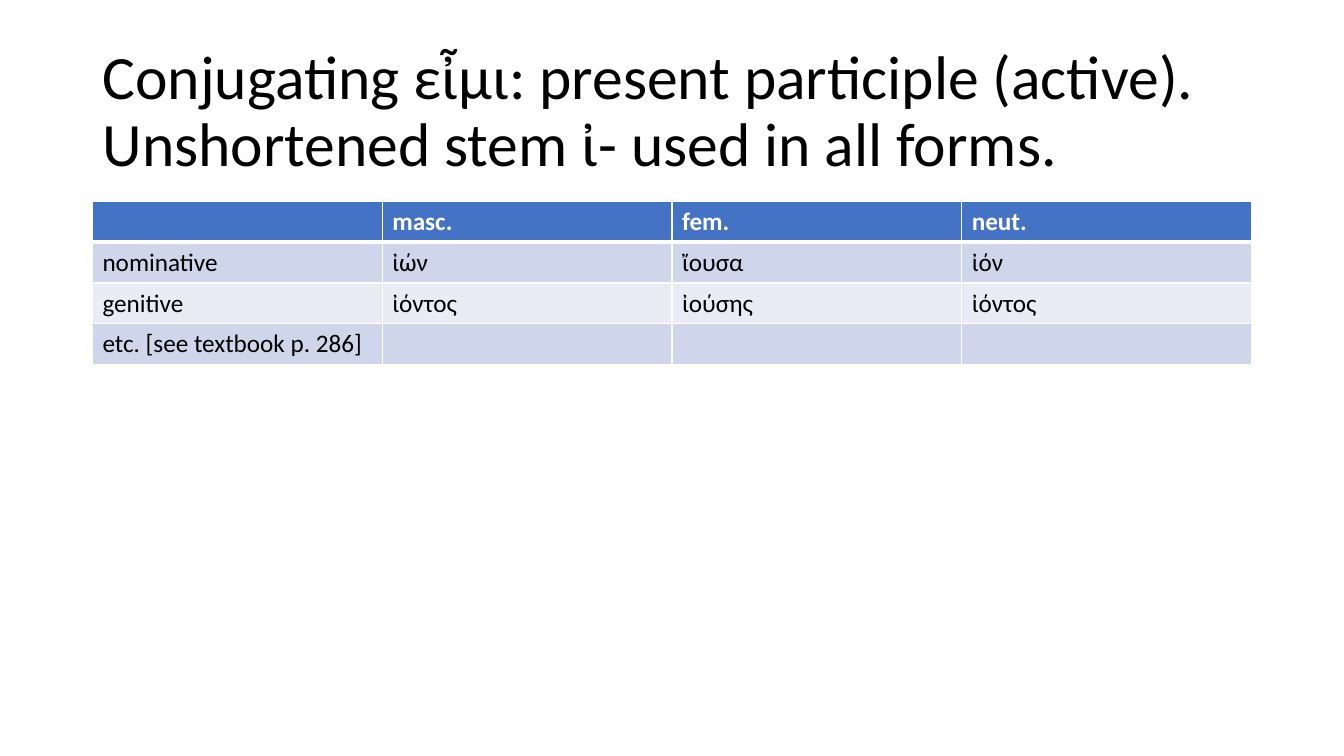
from dataclasses import dataclass

from lxml import etree
from pptx import Presentation
from pptx import util as u
from pptx.dml.color import RGBColor
from pptx.enum import text
from pptx.oxml import ns


@dataclass(frozen=True)
class Theme:
    """Colours, font and type sizes of the slide."""
    face: str = "Calibri"
    ink: str = "000000"
    paper: str = "FFFFFF"
    head: str = "4472C4"
    bands: tuple = ("CFD5EA", "E9EBF5")
    title: int = 44
    body: int = 18
    thin: int = 1
    thick: int = 3


def apply(item, style):
    """Set each attribute named in style on item."""
    for key, value in style.items():
        setattr(item, key, value)


class Deck:
    """Holds the theme and the current slide."""

    def __init__(self, show, theme):
        """Add a title-only slide to show."""
        self.theme = theme
        self.slide = show.slides.add_slide(show.slide_layouts[5])

    def font(self, para, size, tint, bold=False):
        """Format the type of a paragraph."""
        apply(para.font, {"name": self.theme.face, "size": u.Pt(size), "bold": bold})
        para.font.color.rgb = RGBColor.from_string(tint)

    def title(self, words, box):
        """Place and fill the title."""
        shape = self.slide.shapes.title
        apply(shape, dict(zip(("left", "top", "width", "height"), map(u.Cm, box))))
        frame = shape.text_frame
        apply(frame, {"text": words, "word_wrap": True,
                      "auto_size": text.MSO_AUTO_SIZE.NONE,
                      "vertical_anchor": text.MSO_ANCHOR.MIDDLE})
        para = frame.paragraphs[0]
        apply(para, {"alignment": text.PP_ALIGN.LEFT, "line_spacing": 0.9})
        self.font(para, self.theme.title, self.theme.ink)

    def edge(self, cell, side, width):
        """Draw one border of a cell."""
        props = cell._tc.get_or_add_tcPr()
        line = etree.SubElement(props, ns.qn(f"a:ln{side}"), w=str(u.Pt(width)))
        fill = etree.SubElement(line, ns.qn("a:solidFill"))
        etree.SubElement(fill, ns.qn("a:srgbClr"), val=self.theme.paper)

    def cell(self, cell, words, row):
        """Fill and format one cell by its row."""
        look = self.theme
        head = row == 0
        for side in "LRTB":
            heavy = (side == "B" and row == 0) or (side == "T" and row == 1)
            self.edge(cell, side, look.thick if heavy else look.thin)
        cell.fill.solid()
        tint = look.head if head else look.bands[(row - 1) % 2]
        cell.fill.fore_color.rgb = RGBColor.from_string(tint)
        cell.text = words
        self.font(cell.text_frame.paragraphs[0], look.body,
                  look.paper if head else look.ink, head)

    def table(self, rows, box):
        """Add a table with equal rows and columns."""
        grid = self.slide.shapes.add_table(
            len(rows), len(rows[0]), *map(u.Cm, box)).table
        for row, line in enumerate(rows):
            for col, words in enumerate(line):
                self.cell(grid.cell(row, col), words, row)


FORMS = (
    ("", "masc.", "fem.", "neut."),
    ("nominative", "ἰών", "ἴουσα", "ἰόν"),
    ("genitive", "ἰόντος", "ἰούσης", "ἰόντος"),
    ("etc. [see textbook p. 286]", "", "", ""),
)


def main():
    """Build and save the slide."""
    show = Presentation()
    apply(show, {"slide_width": u.Cm(33.87), "slide_height": u.Cm(19.05)})
    deck = Deck(show, Theme())
    deck.title("Conjugating εἶμι: present participle (active). "
               "Unshortened stem ἰ- used in all forms.", (2.33, 1.01, 29.21, 3.68))
    deck.table(FORMS, (2.33, 5.07, 29.21, 4.12))
    show.save("out.pptx")


if __name__ == "__main__":
    main()
